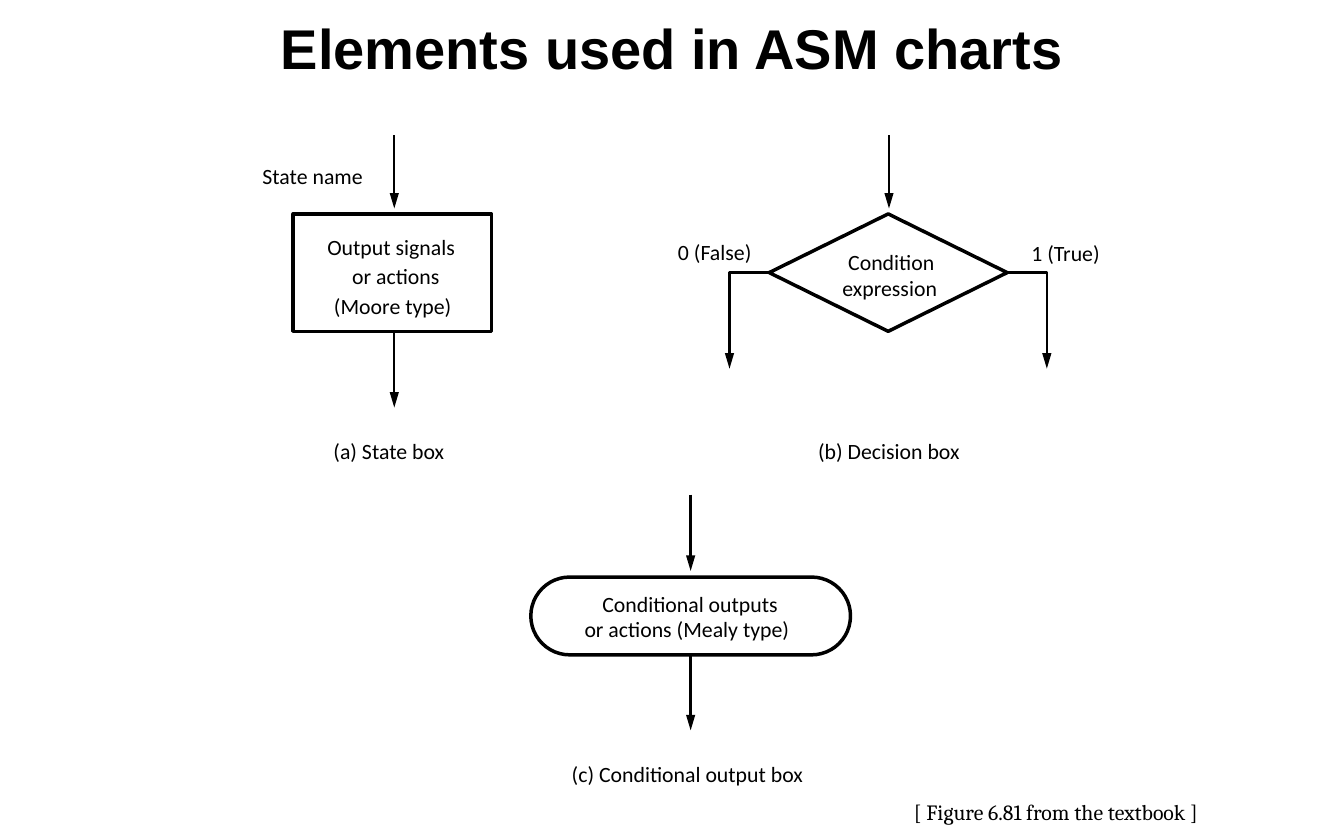
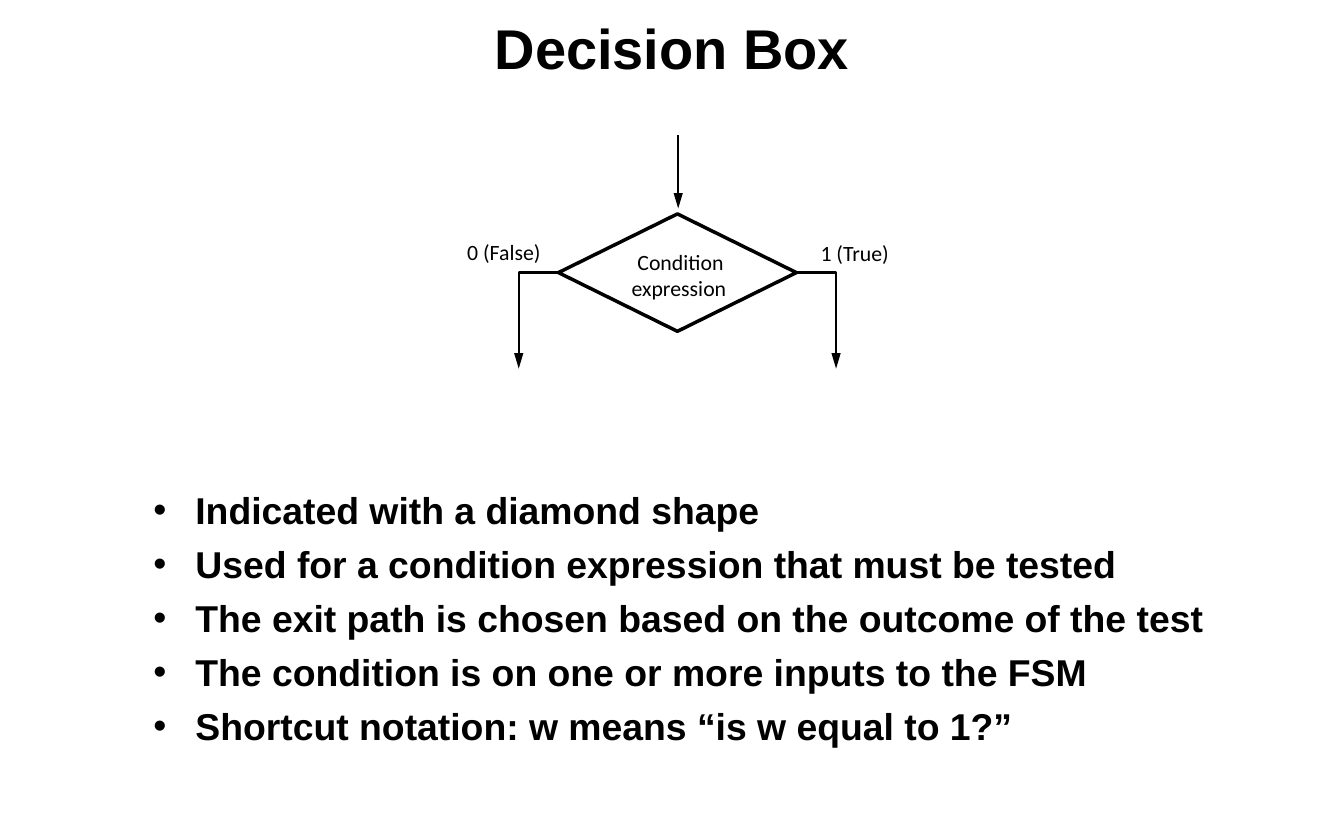
"""Builds two slides on the elements of ASM charts."""
from lxml import etree
from pptx import Presentation
from pptx.dml.color import RGBColor
from pptx.enum.shapes import MSO_CONNECTOR, MSO_SHAPE
from pptx.enum.text import MSO_ANCHOR, MSO_AUTO_SIZE, PP_ALIGN
from pptx.oxml.ns import qn
from pptx.util import Pt

LEFT, CENTER = PP_ALIGN.LEFT, PP_ALIGN.CENTER
TOP, MIDDLE = MSO_ANCHOR.TOP, MSO_ANCHOR.MIDDLE
NO_AUTOSIZE = MSO_AUTO_SIZE.NONE
STRAIGHT = MSO_CONNECTOR.STRAIGHT
RECTANGLE, DIAMOND = MSO_SHAPE.RECTANGLE, MSO_SHAPE.DIAMOND
ROUNDED = MSO_SHAPE.ROUNDED_RECTANGLE

COLORS = {"ink": "000000"}
LABEL_HEIGHT = 17
ENTRY_TOP, BOX_TOP, BOX_HEIGHT = 87, 137.5, 75.5


def color(name):
    return RGBColor.from_string(COLORS[name])


def write(tf, text, size=14, font="Calibri", bold=False, align=LEFT,
          anchor=TOP, inset=None, wrap=False, before=0, indent=0):
    tf.word_wrap = wrap
    tf.auto_size = NO_AUTOSIZE
    tf.vertical_anchor = anchor
    if inset is not None:
        tf.margin_left = tf.margin_right = Pt(inset)
        tf.margin_top = tf.margin_bottom = Pt(inset)
    for i, line in enumerate(text.split("\n")):
        p = tf.paragraphs[0] if i == 0 else tf.add_paragraph()
        p.alignment = align
        p.space_before = Pt(before)
        if indent:
            add_bullet(p, indent)
        r = p.add_run()
        r.text = line
        r.font.size = Pt(size)
        r.font.name = font
        r.font.bold = bold
        r.font.color.rgb = color("ink")


def add_bullet(p, indent):
    pPr = p._p.get_or_add_pPr()
    pPr.set("marL", str(Pt(indent)))
    pPr.set("indent", str(-Pt(indent)))
    etree.SubElement(pPr, qn("a:buFont"), typeface="Arial")
    etree.SubElement(pPr, qn("a:buChar"), char="•")


def add_text(s, text, x, y, w, h, **fmt):
    box = s.shapes.add_textbox(Pt(x), Pt(y), Pt(w), Pt(h))
    write(box.text_frame, text, **fmt)


def add_label(s, text, cx, y, w):
    add_text(s, text, cx - w / 2, y, w, LABEL_HEIGHT, align=CENTER, inset=0)


def add_title_slide(prs, title):
    s = prs.slides.add_slide(prs.slide_layouts[5])
    sp = s.shapes.title
    sp.left, sp.top, sp.width, sp.height = Pt(72), Pt(3), Pt(720), Pt(54)
    write(sp.text_frame, title, size=36, font="Arial", bold=True,
          align=CENTER, anchor=MIDDLE, wrap=True)
    return s


def add_box(s, kind, x, y, w, h):
    sp = s.shapes.add_shape(kind, Pt(x), Pt(y), Pt(w), Pt(h))
    sp.shadow.inherit = False
    sp.fill.background()
    sp.line.color.rgb = color("ink")
    sp.line.width = Pt(2.25)
    return sp


def add_head(sp):
    sp.line.color.rgb = color("ink")
    sp.line.width = Pt(1.5)
    etree.SubElement(sp.line._get_or_add_ln(), qn("a:tailEnd"),
                     type="triangle", w="med", len="lg")


def add_arrow(s, x, y1, y2):
    sp = s.shapes.add_connector(STRAIGHT, Pt(x), Pt(y1), Pt(x), Pt(y2))
    add_head(sp)
    etree.SubElement(sp._element.spPr, qn("a:effectLst"))


def add_elbow(s, x1, y1, x2, y2):
    fb = s.shapes.build_freeform(Pt(x1), Pt(y1))
    fb.add_line_segments([(Pt(x2), Pt(y1)), (Pt(x2), Pt(y2))], close=False)
    sp = fb.convert_to_shape()
    sp.shadow.inherit = False
    sp.fill.background()
    add_head(sp)


def add_state(s, cx):
    add_box(s, RECTANGLE, cx - 64, BOX_TOP, 127.5, BOX_HEIGHT)
    add_arrow(s, cx + 1, ENTRY_TOP, 134)
    add_arrow(s, cx + 1, BOX_TOP + BOX_HEIGHT, 262)
    add_label(s, "State name", cx - 51.5, 104.5, 65.5)
    add_label(s, "Output signals", cx - 1, 150.5, 83)
    add_label(s, "or actions", cx + 2, 169.2, 57)
    add_label(s, "(Moore type)", cx, 188, 76)


def add_decision(s, cx):
    half, reach, middle = 76.5, 102, BOX_TOP + BOX_HEIGHT / 2
    add_box(s, DIAMOND, cx - half, BOX_TOP, 2 * half, BOX_HEIGHT)
    add_arrow(s, cx + 0.5, ENTRY_TOP, 134)
    for side in (-1, 1):
        add_elbow(s, cx + side * half, middle, cx + side * reach, 237)
    add_label(s, "Condition", cx + 2, 160, 59)
    add_label(s, "expression", cx + 1, 176.4, 62)
    add_label(s, "0 (False)", cx - 111.5, 153.5, 51)
    add_label(s, "1 (True)", cx + 114, 154, 45)


def add_conditional_output(s, cx):
    sp = add_box(s, ROUNDED, cx - 102.75, 371, 205.5, 50)
    sp.adjustments[0] = 0.5
    add_arrow(s, cx, 318, 367)
    add_arrow(s, cx, 421, 469.5)
    add_label(s, "Conditional outputs", cx - 0.3, 379.5, 117)
    add_label(s, "or actions (Mealy type)", cx - 2.3, 396, 136)


def main():
    prs = Presentation()
    prs.slide_width, prs.slide_height = Pt(864), Pt(540)

    s = add_title_slide(prs, "Elements used in ASM charts")
    add_state(s, 252.5)
    add_decision(s, 571)
    add_conditional_output(s, 444)
    add_label(s, "(a) State box", 250, 281.5, 75)
    add_label(s, "(b) Decision box", 571.5, 281.5, 92)
    add_label(s, "(c) Conditional output box", 442, 489, 150)
    add_text(s, "[ Figure 6.81 from the textbook ]", 580.5, 510, 208, 24.5,
             font="Cambria")

    s = add_title_slide(prs, "Decision Box")
    add_decision(s, 435.5)
    add_text(s, "\n".join([
        "Indicated with a diamond shape",
        "Used for a condition expression that must be tested",
        "The exit path is chosen based on the outcome of the test",
        "The condition is on one or more inputs to the FSM",
        "Shortcut notation: w means “is w equal to 1?”",
    ]), 91.5, 309.5, 691, 204, size=24, font="Arial", bold=True,
        wrap=True, before=6, indent=27)

    prs.save("out.pptx")


if __name__ == "__main__":
    main()
